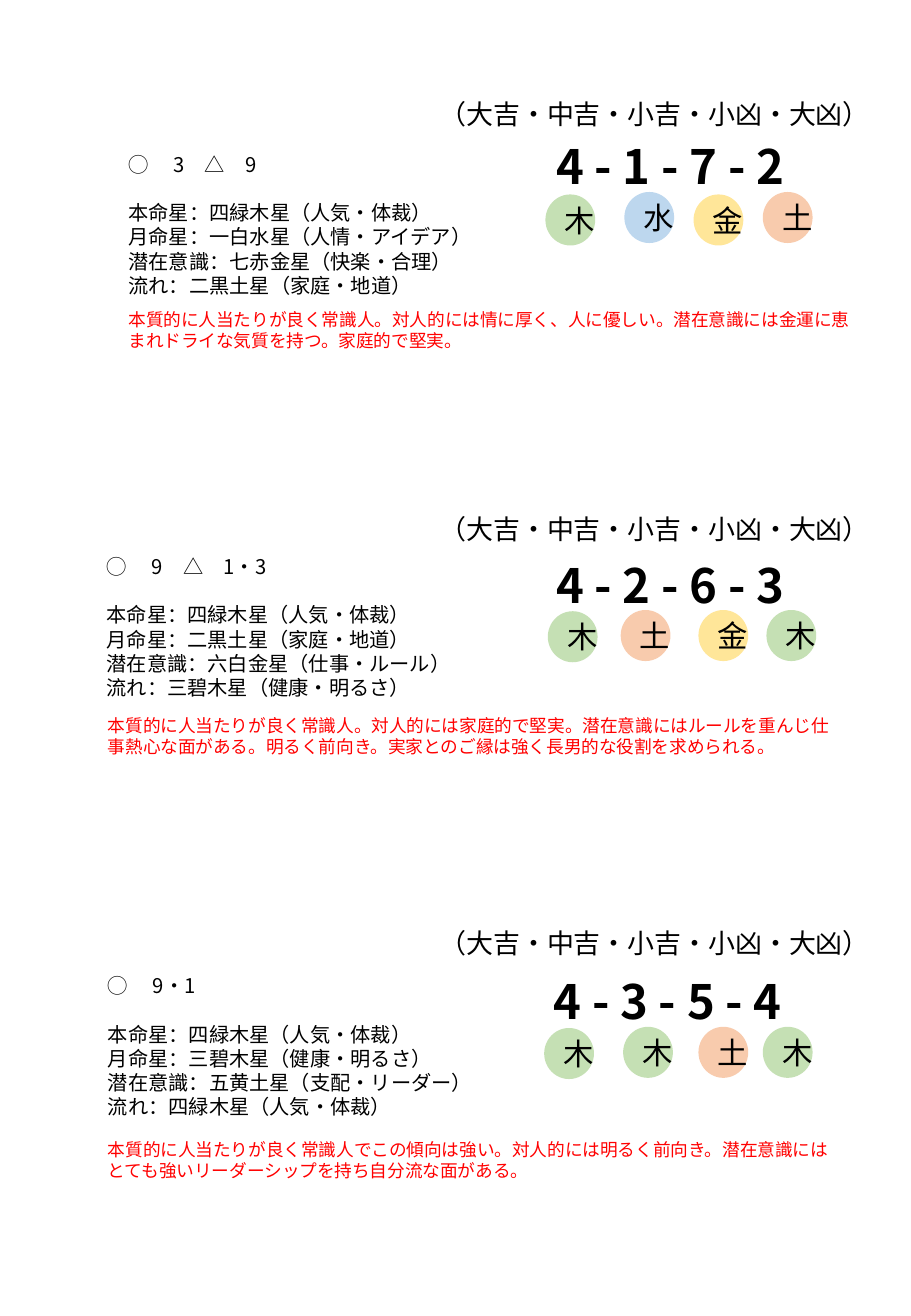
from dataclasses import dataclass

from pptx import Presentation
from pptx.dml.color import RGBColor
from pptx.enum.shapes import MSO_SHAPE as Shape
from pptx.enum.text import MSO_ANCHOR as Anchor, MSO_AUTO_SIZE as AutoSize, PP_ALIGN as Align
from pptx.oxml.xmlchemy import OxmlElement
from pptx.util import Inches, Pt


@dataclass(frozen=True)
class Theme:
    """Colours, type sizes and spacing of the slide."""
    font: str = "Noto Sans CJK JP"
    ink: str = "000000"
    comment: str = "FF0000"
    scale_size: float = 16
    star_size: float = 12
    number_size: float = 28
    element_size: float = 18
    comment_size: float = 10.5
    leading: float = 1.2


ELEMENT_COLOURS = {"木": "C5E0B4", "水": "BDD7EE", "金": "FFE699", "土": "F8CBAD"}
LUCK_SCALE = "（大吉・中吉・小吉・小凶・大凶）"
STAR_LABELS = ("本命星", "月命星", "潜在意識", "流れ")
STAR_TRAITS = {
    "一白水星": "人情・アイデア",
    "二黒土星": "家庭・地道",
    "三碧木星": "健康・明るさ",
    "四緑木星": "人気・体裁",
    "五黄土星": "支配・リーダー",
    "六白金星": "仕事・ルール",
    "七赤金星": "快楽・合理",
}

READINGS = [
    {
        "scale_top": 0.75,
        "marks": "◯　 3　△　9",
        "stars": ("四緑木星", "一白水星", "七赤金星", "二黒土星"),
        "stars_at": (0.96, 1.2, 3.24),
        "numbers": "4 - 1 - 7 - 2",
        "numbers_at": (4.48, 1.08),
        "circles": ((4.49, 1.6), (5.14, 1.58), (5.71, 1.6), (6.28, 1.58)),
        "comment": "本質的に人当たりが良く常識人。対人的には情に厚く、人に優しい。"
                   "潜在意識には金運に恵まれドライな気質を持つ。家庭的で堅実。",
        "comment_at": (0.96, 2.49),
    },
    {
        "scale_top": 4.17,
        "marks": "◯　 9　△　1・3",
        "stars": ("四緑木星", "二黒土星", "六白金星", "三碧木星"),
        "stars_at": (0.78, 4.51, 3.27),
        "numbers": "4 - 2 - 6 - 3",
        "numbers_at": (4.48, 4.53),
        "circles": ((4.51, 5.03), (5.11, 5.02), (5.75, 5.02), (6.31, 5.02)),
        "comment": "本質的に人当たりが良く常識人。対人的には家庭的で堅実。"
                   "潜在意識にはルールを重んじ仕事熱心な面がある。明るく前向き。"
                   "実家とのご縁は強く長男的な役割を求められる。",
        "comment_at": (0.79, 5.83),
    },
    {
        "scale_top": 7.58,
        "marks": "◯　 9・1",
        "stars": ("四緑木星", "三碧木星", "五黄土星", "四緑木星"),
        "stars_at": (0.79, 7.96, 3.32),
        "numbers": "4 - 3 - 5 - 4",
        "numbers_at": (4.46, 7.95),
        "circles": ((4.48, 8.46), (5.13, 8.45), (5.75, 8.45), (6.28, 8.45)),
        "comment": "本質的に人当たりが良く常識人でこの傾向は強い。対人的には明るく前向き。"
                   "潜在意識にはとても強いリーダーシップを持ち自分流な面がある。",
        "comment_at": (0.79, 9.32),
    },
]


class ReadingSlide:
    """Draws star readings on one slide in one theme."""

    def __init__(self, slide, theme):
        self.slide = slide
        self.theme = theme
        self.group = None

    def fill_text(self, frame, lines, size, colour, bold=False, align=Align.LEFT):
        """Fill a text frame with one styled paragraph per line."""
        frame.text = "\n".join(lines)
        font_format = {"name": self.theme.font, "size": Pt(size), "bold": bold}
        paragraph_format = {"alignment": align, "line_spacing": Pt(size * self.theme.leading)}
        for paragraph in frame.paragraphs:
            for name, value in paragraph_format.items():
                setattr(paragraph, name, value)
            for run in paragraph.runs:
                for name, value in font_format.items():
                    setattr(run.font, name, value)
                run.font.color.rgb = RGBColor.from_string(colour)
                east_asian = OxmlElement("a:ea")
                east_asian.set("typeface", self.theme.font)
                run.font._element.find("{*}latin").addnext(east_asian)

    def text(self, box, lines, size, colour=None, bold=False, wrap=True):
        """Add a text box and return its frame."""
        frame = self.group.shapes.add_textbox(*map(Inches, box)).text_frame
        frame.word_wrap = wrap
        frame.auto_size = AutoSize.SHAPE_TO_FIT_TEXT
        self.fill_text(frame, lines, size, colour or self.theme.ink, bold)
        return frame

    def stars(self, box, marks, stars):
        """Add the marks and, one line below them, the four stars."""
        size = self.theme.star_size
        lines = [f"{label}：{star}（{STAR_TRAITS[star]}）" for label, star in zip(STAR_LABELS, stars)]
        frame = self.text(box, [marks, *lines], size)
        frame.paragraphs[1].space_before = Pt(size * self.theme.leading)

    def element(self, left, top, name):
        """Add a circle naming one of the elements."""
        shape = self.group.shapes.add_shape(Shape.OVAL, *map(Inches, (left, top, 0.41, 0.42)))
        shape.shadow.inherit = False
        shape.fill.solid()
        shape.fill.fore_color.rgb = RGBColor.from_string(ELEMENT_COLOURS[name])
        shape.line.fill.background()
        shape.text_frame.vertical_anchor = Anchor.MIDDLE
        self.fill_text(shape.text_frame, [name], self.theme.element_size, self.theme.ink, align=Align.CENTER)

    def reading(self, reading):
        """Add one whole reading as a group."""
        theme = self.theme
        self.group = self.slide.shapes.add_group_shape()
        self.text((3.52, reading["scale_top"], 3.79, 0.37), [LUCK_SCALE], theme.scale_size, wrap=False)
        self.stars((*reading["stars_at"], 1.31), reading["marks"], reading["stars"])
        self.text((*reading["numbers_at"], 2.52, 0.57), [reading["numbers"]], theme.number_size, bold=True)
        for (left, top), star in zip(reading["circles"], reading["stars"]):
            self.element(left, top, star[2])
        self.text((*reading["comment_at"], 6.26, 0.45), [reading["comment"]], theme.comment_size, theme.comment)


def main():
    """Build and save the presentation."""
    presentation = Presentation()
    presentation.slide_width = Inches(7.5)
    presentation.slide_height = Inches(10.83)
    slide = presentation.slides.add_slide(presentation.slide_layouts[6])
    reading_slide = ReadingSlide(slide, Theme())
    for reading in READINGS:
        reading_slide.reading(reading)
    presentation.save("out.pptx")


if __name__ == "__main__":
    main()
